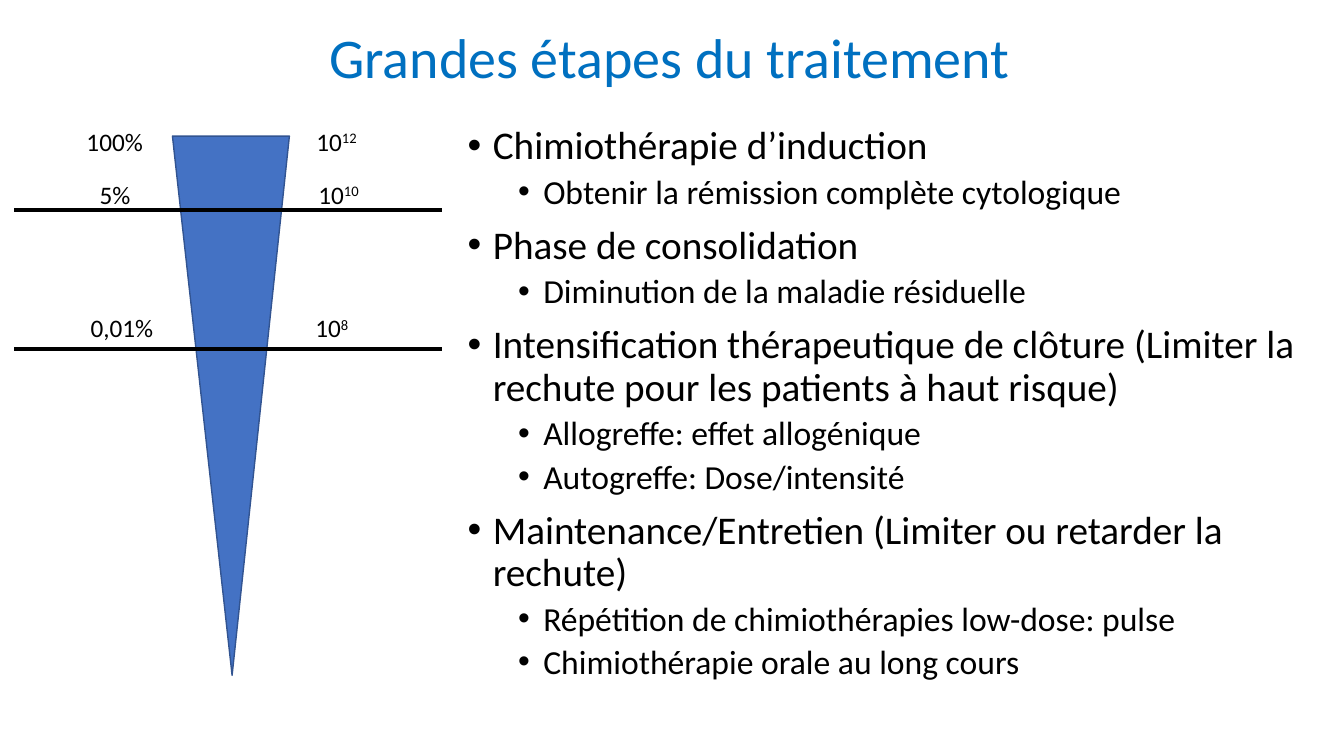
from lxml import etree
from pptx import Presentation
from pptx.dml.color import RGBColor
from pptx.enum import shapes, text
from pptx.oxml import ns
from pptx.util import Inches, Pt

FONT = "Calibri"
BLACK = RGBColor(0x00, 0x00, 0x00)
TITLE_BLUE = RGBColor(0x00, 0x70, 0xC0)
CONE_FILL = RGBColor(0x44, 0x72, 0xC4)
CONE_LINE = RGBColor(0x32, 0x54, 0x91)

STAGES = [
    ("Chimiothérapie d’induction", ["Obtenir la rémission complète cytologique"]),
    ("Phase de consolidation", ["Diminution de la maladie résiduelle"]),
    ("Intensification thérapeutique de clôture (Limiter la rechute pour les patients à haut risque)",
     ["Allogreffe: effet allogénique", "Autogreffe: Dose/intensité"]),
    ("Maintenance/Entretien (Limiter ou retarder la rechute)",
     ["Répétition de chimiothérapies low-dose: pulse", "Chimiothérapie orale au long cours"]),
]

LEVELS = [
    (1.2, "100%", 0.76, 0.77, "12", 3.04, 0.63),
    (1.73, "5%", 0.89, 0.51, "10", 3.06, 0.63),
    (3.05, "0,01%", 0.8, 0.83, "8", 3.03, 0.54),
]
THRESHOLDS = [2.08, 3.46]


def style_run(r, size, color=BLACK):
    r.font.name = FONT
    r.font.size = Pt(size)
    r.font.color.rgb = color


def add_box(slide, left, top, width, height, wrap=True):
    sp = slide.shapes.add_textbox(Inches(left), Inches(top), Inches(width), Inches(height))
    sp.text_frame.word_wrap = wrap
    return sp.text_frame


def add_title(slide, title):
    tf = add_box(slide, 0.89, 0.06, 11.5, 1.08)
    tf.vertical_anchor = text.MSO_ANCHOR.MIDDLE
    tf.text = title
    p = tf.paragraphs[0]
    p.alignment = text.PP_ALIGN.CENTER
    p.line_spacing = 0.9
    style_run(p.runs[0], 40, TITLE_BLUE)


def format_bullet(p, level):
    p.level = level
    p.line_spacing = 0.9
    p.space_before = Pt(5 if level else 10)
    pPr = p._p.get_or_add_pPr()
    pPr.set("marL", str(Inches(0.25 + 0.5 * level)))
    pPr.set("indent", str(Inches(-0.25)))
    etree.SubElement(pPr, ns.qn("a:buFont")).set("typeface", "Arial")
    etree.SubElement(pPr, ns.qn("a:buChar")).set("char", "•")
    style_run(p.runs[0], 24 if level else 28)


def add_stages(slide):
    tf = add_box(slide, 4.54, 1.2, 8.5, 5.8)
    items = []
    for stage, details in STAGES:
        items.append((stage, 0))
        items.extend((detail, 1) for detail in details)
    tf.text = "\n".join(item for item, level in items)
    for p, (item, level) in zip(tf.paragraphs, items):
        format_bullet(p, level)


def add_cone(slide):
    sp = slide.shapes.add_shape(shapes.MSO_SHAPE.ISOSCELES_TRIANGLE,
                                Inches(1.71), Inches(1.35), Inches(1.16), Inches(5.35))
    sp.adjustments[0] = 0.49
    sp.rotation = 180
    sp.shadow.inherit = False
    sp.fill.solid()
    sp.fill.fore_color.rgb = CONE_FILL
    sp.line.color.rgb = CONE_LINE
    sp.line.width = Pt(1)


def add_label(slide, left, top, width, label, exponent=None):
    tf = add_box(slide, left, top, width, 0.4, wrap=False)
    tf.auto_size = text.MSO_AUTO_SIZE.SHAPE_TO_FIT_TEXT
    tf.text = label
    p = tf.paragraphs[0]
    if exponent:
        r = p.add_run()
        r.text = exponent
        r.font._element.set("baseline", "30000")
    for r in p.runs:
        style_run(r, 18)


def add_threshold(slide, y):
    line = slide.shapes.add_connector(shapes.MSO_CONNECTOR.STRAIGHT,
                                      Inches(0.14), Inches(y), Inches(4.38), Inches(y))
    line.line.color.rgb = BLACK
    line.line.width = Pt(3)
    etree.SubElement(line._element.spPr, ns.qn("a:effectLst"))


def main():
    prs = Presentation()
    prs.slide_width = Inches(13.33)
    prs.slide_height = Inches(7.5)
    slide = prs.slides.add_slide(prs.slide_layouts[6])
    add_title(slide, "Grandes étapes du traitement")
    add_stages(slide)
    add_cone(slide)
    for y in THRESHOLDS:
        add_threshold(slide, y)
    for top, share, share_x, share_w, exponent, count_x, count_w in LEVELS:
        add_label(slide, share_x, top, share_w, share)
        add_label(slide, count_x, top, count_w, "10", exponent)
    prs.save("out.pptx")


if __name__ == "__main__":
    main()
